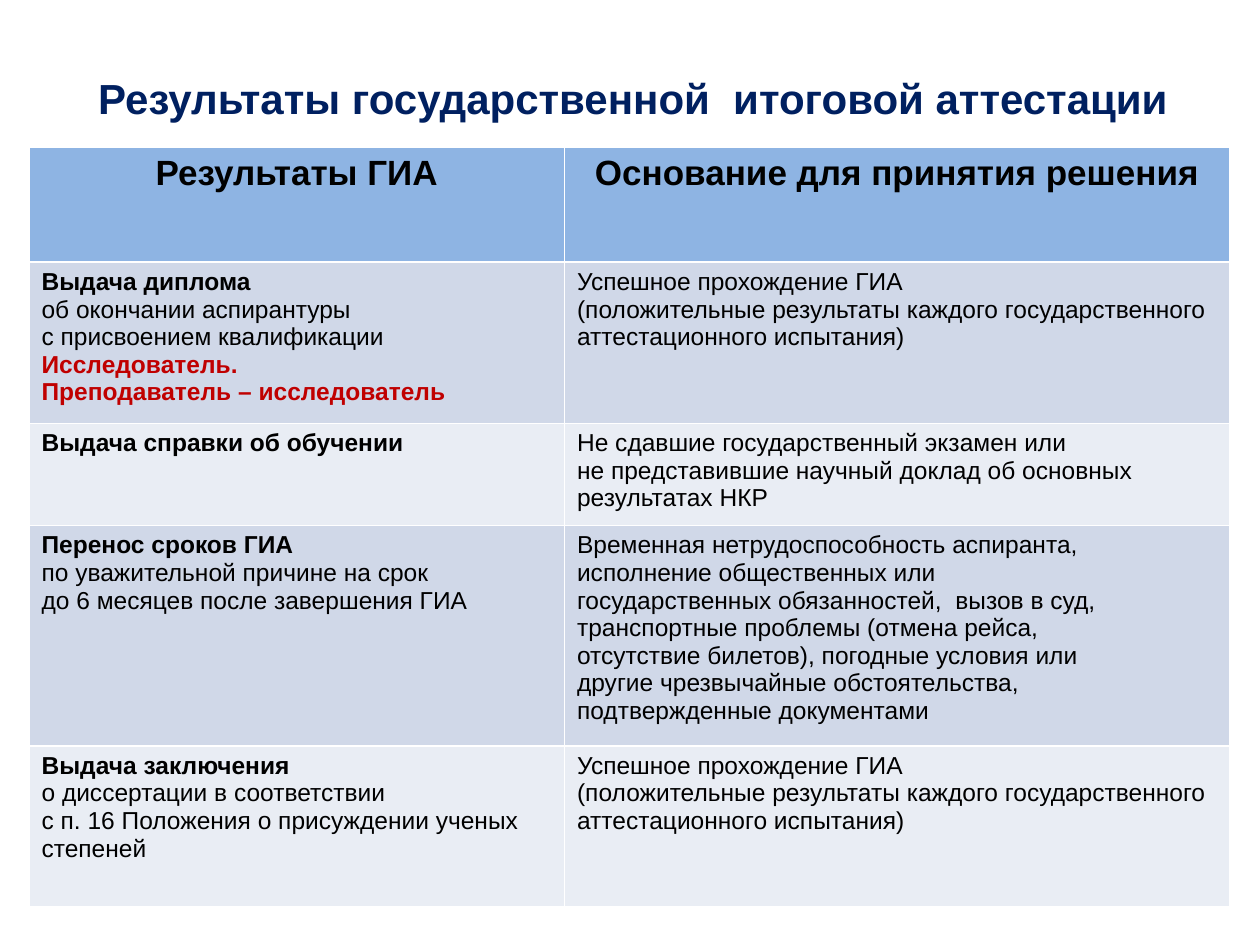
"""Build the slide on the results of the state final assessment."""
from pptx import Presentation
from pptx.dml.color import RGBColor
from pptx.enum.text import MSO_ANCHOR, PP_ALIGN
from pptx.util import Inches, Pt

CENTER, LEFT = PP_ALIGN.CENTER, PP_ALIGN.LEFT
MIDDLE = MSO_ANCHOR.MIDDLE
FONT = "Arial"
NAVY, BLACK, RED = "002060", "000000", "C00000"
HEADER_FILL, BAND_FILLS = "8EB4E3", ("D0D8E8", "E9EDF4")

TITLE = "Результаты государственной  итоговой аттестации"
HEADERS = ("Результаты ГИА", "Основание для принятия решения")
QUALIFICATIONS = ("Исследователь.", "Преподаватель – исследователь")
PASSED = (
    "Успешное прохождение ГИА \v(положительные результаты каждого государственного",
    "аттестационного испытания)",
)
OUTCOMES = [
    (("Выдача диплома", "об окончании аспирантуры", "с присвоением квалификации",
      *QUALIFICATIONS), PASSED),
    (("Выдача справки об обучении",),
     ("Не сдавшие государственный экзамен или  \vне представившие научный доклад об основных",
      "результатах НКР")),
    (("Перенос сроков ГИА",
      "по уважительной причине на срок \vдо 6 месяцев после завершения ГИА"),
     ("Временная нетрудоспособность аспиранта,", "исполнение общественных или",
      "государственных обязанностей,  вызов в суд,", "транспортные проблемы (отмена рейса,",
      "отсутствие билетов), погодные условия или",
      "другие чрезвычайные обстоятельства, подтвержденные документами")),
    (("Выдача заключения",
      "о диссертации в соответствии \vс п. 16 Положения о присуждении ученых степеней"),
     PASSED),
]
COLUMN_WIDTHS = (4.25, 5.28)
ROW_HEIGHTS = (0.91, 1.28, 0.81, 1.75, 1.28)


def color(value):
    return RGBColor.from_string(value)


def format_paragraph(para, size, hue, bold, align):
    para.alignment = align
    for span in para.runs:
        span.font.name = FONT
        span.font.size = Pt(size)
        span.font.bold = bold
        span.font.color.rgb = color(hue)


def fill_cell(cell, lines, fill):
    cell.fill.solid()
    cell.fill.fore_color.rgb = color(fill)
    cell.text_frame.text = "\n".join(lines)
    return cell.text_frame.paragraphs


def add_title(page):
    box = page.shapes.title
    box.left, box.top, box.width, box.height = map(Inches, (0.55, 0.3, 8.95, 0.95))
    box.text_frame.text = TITLE
    box.text_frame.vertical_anchor = MIDDLE
    format_paragraph(box.text_frame.paragraphs[0], 24, NAVY, True, CENTER)


def add_outcomes(page):
    table = page.shapes.add_table(
        len(ROW_HEIGHTS), len(COLUMN_WIDTHS), Inches(0.23), Inches(1.17),
        Inches(sum(COLUMN_WIDTHS)), Inches(sum(ROW_HEIGHTS))).table
    for column, width in zip(table.columns, COLUMN_WIDTHS):
        column.width = Inches(width)
    for row, height in zip(table.rows, ROW_HEIGHTS):
        row.height = Inches(height)
    for column, header in enumerate(HEADERS):
        for para in fill_cell(table.cell(0, column), [header], HEADER_FILL):
            format_paragraph(para, 20, BLACK, True, CENTER)
    for row, outcome in enumerate(OUTCOMES):
        for column, lines in enumerate(outcome):
            paragraphs = fill_cell(table.cell(row + 1, column), lines, BAND_FILLS[row % 2])
            for index, (para, line) in enumerate(zip(paragraphs, lines)):
                qualification = line in QUALIFICATIONS
                bold = qualification or (column == 0 and index == 0)
                format_paragraph(para, 14, RED if qualification else BLACK, bold, LEFT)


def main():
    deck = Presentation()
    deck.slide_width, deck.slide_height = Inches(10), Inches(7.5)
    page = deck.slides.add_slide(deck.slide_layouts.get_by_name("Title Only"))
    add_title(page)
    add_outcomes(page)
    deck.save("out.pptx")


if __name__ == "__main__":
    main()
